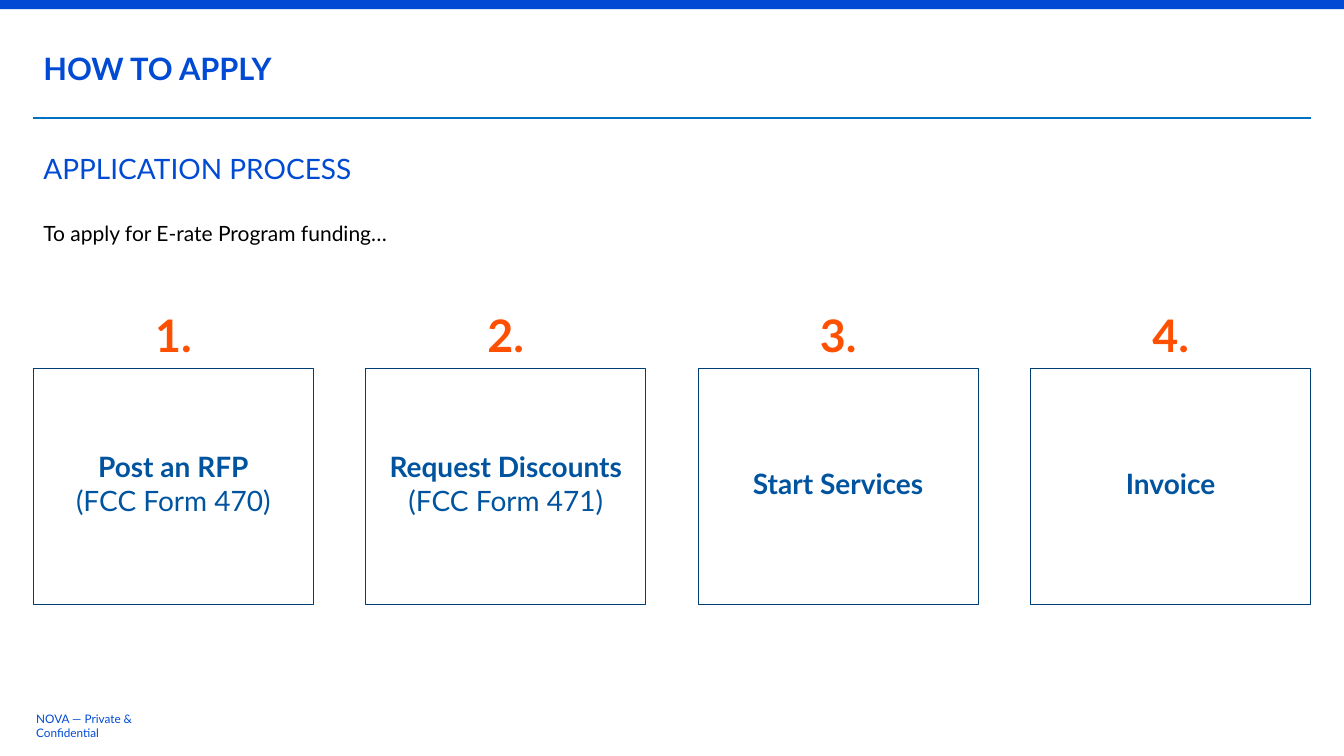
from lxml import etree
from pptx import Presentation
from pptx.dml.color import RGBColor
from pptx.enum.shapes import MSO_CONNECTOR, MSO_SHAPE
from pptx.enum.text import MSO_ANCHOR, MSO_AUTO_SIZE, PP_ALIGN
from pptx.oxml.ns import qn
from pptx.util import Inches, Pt

BLUE, STEEL, NAVY, RULE = "004AD4", "00549F", "003E76", "0070C0"
ORANGE, BLACK, WHITE = "FE5000", "000000", "FFFFFF"
MARGIN, CONTENT_W, CARD_W = 0.33, 12.67, 2.78
STEPS = [
    ["Post an RFP", "(FCC Form 470)"],
    ["Request Discounts", "(FCC Form 471)"],
    ["Start Services"],
    ["Invoice"],
]


def color(hex_code):
    return RGBColor.from_string(hex_code)


class SlideBuilder:
    font = "Lato"

    def __init__(self, slide):
        self.s = slide

    def style(self, p, size, hex_code, bold=False, align=PP_ALIGN.LEFT):
        p.alignment = align
        p.font.name = self.font
        p.font.size = Pt(size)
        p.font.bold = bold
        p.font.color.rgb = color(hex_code)

    def placeholder(self, idx, text, top, height, size, hex_code,
                    bold=False, anchor=MSO_ANCHOR.MIDDLE, after=0):
        sp = self.s.placeholders[idx]
        sp.left, sp.top = Inches(MARGIN), Inches(top)
        sp.width, sp.height = Inches(CONTENT_W), Inches(height)
        tf = sp.text_frame
        tf.text = text
        tf.auto_size = MSO_AUTO_SIZE.NONE
        tf.vertical_anchor = anchor
        p = tf.paragraphs[0]
        self.style(p, size, hex_code, bold)
        p.space_before, p.space_after = Pt(0), Pt(after)
        # Plain text: no bullet and no hanging indent
        pPr = p._p.get_or_add_pPr()
        pPr.set("marL", "0")
        pPr.set("indent", "0")
        bullet = etree.Element(qn("a:buNone"))
        pPr.insert_element_before(bullet, "a:tabLst", "a:defRPr", "a:extLst")

    def text(self, lines, left, top, width, height, size, hex_code,
             bold=True, align=PP_ALIGN.CENTER):
        tf = self.s.shapes.add_textbox(
            Inches(left), Inches(top), Inches(width), Inches(height)).text_frame
        tf.word_wrap = True
        for i, line in enumerate(lines):
            p = tf.add_paragraph() if i else tf.paragraphs[0]
            p.text = line
            self.style(p, size, hex_code, bold and i == 0, align)
        return tf

    def rect(self, left, top, width, height, fill, line=None):
        sp = self.s.shapes.add_shape(
            MSO_SHAPE.RECTANGLE,
            Inches(left), Inches(top), Inches(width), Inches(height))
        sp.shadow.inherit = False
        sp.fill.solid()
        sp.fill.fore_color.rgb = color(fill)
        if line:
            sp.line.color.rgb = color(line)
            sp.line.width = Pt(0.75)
        else:
            sp.line.fill.background()

    def rule(self, top, hex_code, weight):
        cxn = self.s.shapes.add_connector(
            MSO_CONNECTOR.STRAIGHT, Inches(MARGIN), Inches(top),
            Inches(MARGIN + CONTENT_W), Inches(top))
        cxn.line.color.rgb = color(hex_code)
        cxn.line.width = Pt(weight)
        etree.SubElement(cxn._element.spPr, qn("a:effectLst"))


def main():
    prs = Presentation()
    prs.slide_width, prs.slide_height = Inches(13.33), Inches(7.5)
    b = SlideBuilder(prs.slides.add_slide(prs.slide_layouts[3]))

    # Frame: top band, rule and footer
    b.rule(1.17, RULE, 1.25)
    b.rect(0, 0, 13.33, 0.09, BLUE)
    footer = b.text(["NOVA — Private & Confidential"], MARGIN, 7.1, 1.56, 0.2,
                    8.4, BLUE, bold=False, align=PP_ALIGN.LEFT)
    footer.vertical_anchor = MSO_ANCHOR.MIDDLE
    footer.margin_left = footer.margin_right = Inches(0.03)
    footer.margin_top = footer.margin_bottom = Inches(0.03)

    # Headings and introduction
    b.placeholder(1, "HOW TO APPLY", 0.33, 0.69, 22, BLUE, bold=True)
    b.placeholder(0, "APPLICATION PROCESS", 1.33, 0.67, 20, BLUE)
    b.placeholder(2, "To apply for E-rate Program funding…", 2.14, 0.44, 15,
                  BLACK, anchor=MSO_ANCHOR.TOP, after=8)

    # Four numbered steps, spread evenly between the margins
    pitch = (CONTENT_W - CARD_W) / (len(STEPS) - 1)
    for i, lines in enumerate(STEPS):
        left = MARGIN + i * pitch
        height = 0.1 + 0.33 * len(lines)
        b.rect(left, 3.66, CARD_W, 2.34, WHITE, NAVY)
        b.text(lines, left, 4.79 - height / 2, CARD_W, height, 20, STEEL)
        b.text([f"{i + 1}."], left, 3, CARD_W, 0.64, 32, ORANGE)

    prs.save("out.pptx")


if __name__ == "__main__":
    main()
